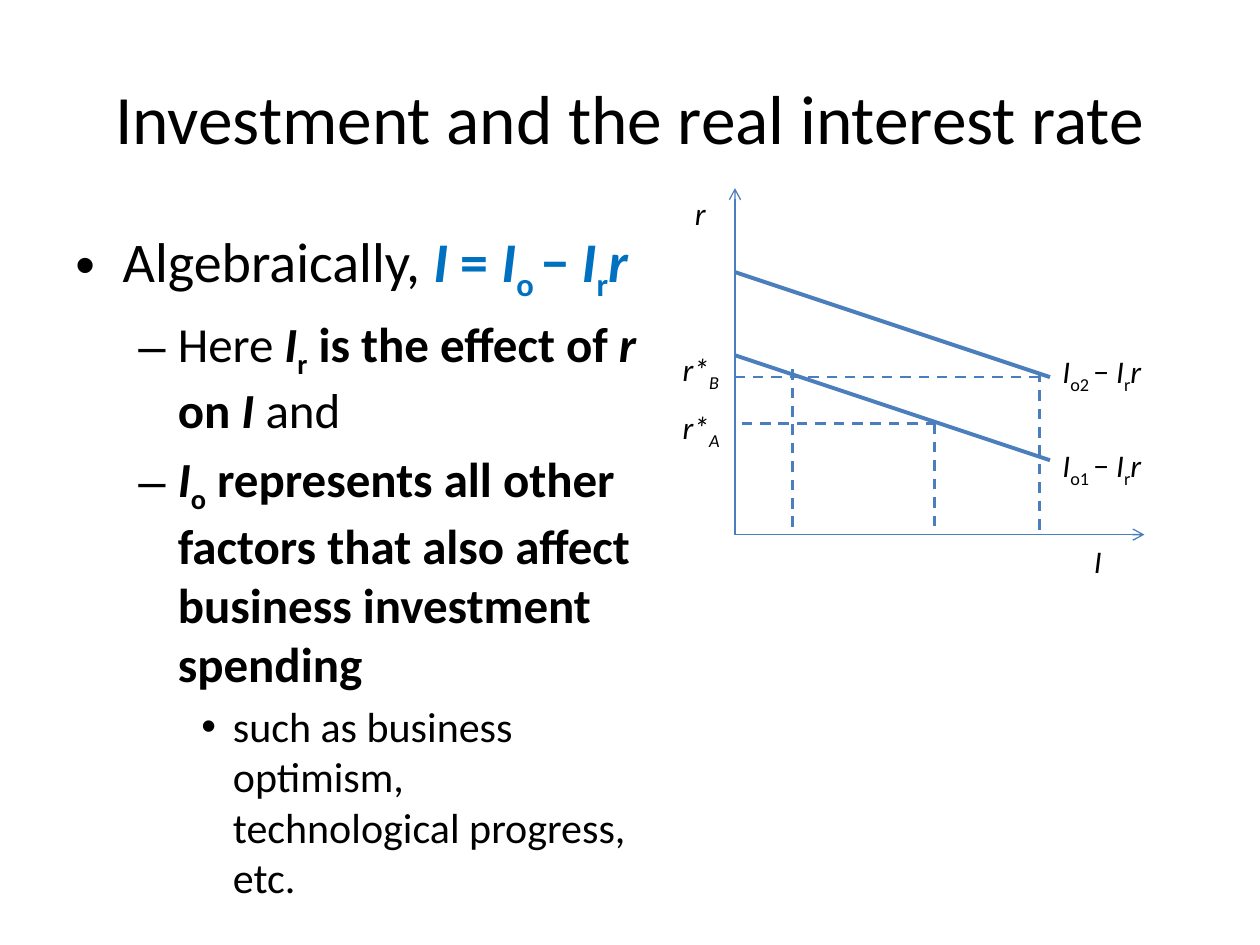
import pptx
import pptx.dml.color
import pptx.enum.dml
import pptx.enum.shapes
import pptx.enum.text
import pptx.oxml.ns
import pptx.util
from lxml import etree

Pt = pptx.util.Pt
RGBColor = pptx.dml.color.RGBColor
BLACK = RGBColor(0x00, 0x00, 0x00)
ACCENT = RGBColor(0x00, 0x70, 0xC0)
LINE_BLUE = RGBColor(0x4B, 0x7E, 0xBC)
WHITE = RGBColor(0xFF, 0xFF, 0xFF)

# Bullet level: size, left margin, hanging indent, bullet character
LEVELS = [(32, 27, 27, "•"), (28, 58.5, 22.5, "–"), (24, 90, 18, "•")]

# Each span is (text, flags): b bold, i italic, s subscript, a accent colour
BODY = [
    (0, [("Algebraically, ", ""), ("I", "bia"), (" = ", "ba"), ("I", "bia"),
         ("o ", "bsa"), ("− ", "ba"), ("I", "bia"), ("r", "bsa"), ("r", "bia")]),
    (1, [("Here ", ""), ("I", "bi"), ("r", "bs"), (" is the effect of ", "b"),
         ("r", "bi"), (" on ", "b"), ("I ", "bi"), ("and", "")]),
    (1, [("I", "bi"), ("o", "bs"),
         (" represents all other factors that also affect business investment spending", "b")]),
    (2, [("such as business optimism, technological progress, etc.", "")]),
]


def curve_label(number):
    return [("I", "i"), (f"o{number} ", "s"), ("− ", ""), ("I", "i"), ("r", "s"), ("r", "i")]


def rate_label(letter):
    return [("r*", "i"), (letter, "is")]


class SlideBuilder:
    font_name = "Calibri"
    label_size = 18

    def __init__(self, deck):
        self.page = deck.slides.add_slide(deck.slide_layouts[5])
        self.page.background.fill.solid()
        self.page.background.fill.fore_color.rgb = WHITE

    def add_spans(self, para, spans, size):
        for text, flags in spans:
            span = para.add_run()
            span.text = text
            style = {"name": self.font_name, "size": Pt(size),
                     "bold": "b" in flags, "italic": "i" in flags}
            for name, value in style.items():
                setattr(span.font, name, value)
            span.font.color.rgb = ACCENT if "a" in flags else BLACK
            if "s" in flags:
                span._r.get_or_add_rPr().set("baseline", "-25000")

    def title(self, text, left, top, width, height):
        box = self.page.shapes.title
        place = {"left": left, "top": top, "width": width, "height": height}
        for name, value in place.items():
            setattr(box, name, Pt(value))
        frame = box.text_frame
        frame.auto_size = pptx.enum.text.MSO_AUTO_SIZE.NONE
        frame.vertical_anchor = pptx.enum.text.MSO_ANCHOR.MIDDLE
        para = frame.paragraphs[0]
        para.alignment = pptx.enum.text.PP_ALIGN.CENTER
        self.add_spans(para, [(text, "")], 39.6)

    def text_frame(self, left, top, width, height):
        box = self.page.shapes.add_textbox(Pt(left), Pt(top), Pt(width), Pt(height))
        box.text_frame.word_wrap = True
        return box.text_frame

    def bullets(self, items, left, top, width, height):
        frame = self.text_frame(left, top, width, height)
        for index, (level, spans) in enumerate(items):
            size, margin, hanging, mark = LEVELS[level]
            para = frame.add_paragraph() if index else frame.paragraphs[0]
            para.level = level
            para.space_before = Pt(size * 0.2)
            properties = para._p.get_or_add_pPr()
            properties.set("marL", str(Pt(margin)))
            properties.set("indent", str(-Pt(hanging)))
            for tag, key, value in (("a:buFont", "typeface", "Arial"),
                                    ("a:buChar", "char", mark)):
                etree.SubElement(properties, pptx.oxml.ns.qn(tag)).set(key, value)
            self.add_spans(para, spans, size)

    def label(self, spans, left, top, width):
        frame = self.text_frame(left, top, width, 29)
        frame.auto_size = pptx.enum.text.MSO_AUTO_SIZE.SHAPE_TO_FIT_TEXT
        self.add_spans(frame.paragraphs[0], spans, self.label_size)

    def line(self, start, end, weight, dashed=False, arrow=False):
        connector = self.page.shapes.add_connector(
            pptx.enum.shapes.MSO_CONNECTOR.STRAIGHT,
            *(Pt(value) for value in (*start, *end)))
        connector.line.color.rgb = LINE_BLUE
        connector.line.width = Pt(weight)
        if dashed:
            connector.line.dash_style = pptx.enum.dml.MSO_LINE.DASH
        if arrow:
            outline = connector.line._get_or_add_ln()
            etree.SubElement(outline, pptx.oxml.ns.qn("a:tailEnd")).set("type", "arrow")
        etree.SubElement(connector._element.spPr, pptx.oxml.ns.qn("a:effectLst"))


def main():
    deck = pptx.Presentation()
    deck.slide_width, deck.slide_height = Pt(720), Pt(540)
    slide = SlideBuilder(deck)
    slide.title("Investment and the real interest rate", 36, 21.6, 648, 90)
    slide.bullets(BODY, 36, 126, 336, 356.5)

    origin_x, origin_y = 420, 305.5
    for axis_end in ((654, origin_y), (origin_x, 107.5)):
        slide.line((origin_x, origin_y), axis_end, 0.75, arrow=True)
    for intercept in (203, 155.5):
        slide.line((origin_x, intercept), (600, intercept + 60), 2.25)
    for x, top in ((534, 242), (453, 211), (594, 212.5)):
        slide.line((x, top), (x, origin_y), 1.5, dashed=True)
    for x, rate in ((535, 242), (594, 215.5)):
        slide.line((x, rate), (origin_x, rate), 1.5, dashed=True)

    for spans, left, top, width in (
        ([("I", "i")], 618, 306, 30),
        ([("r", "i")], 390, 107.5, 30),
        (curve_label(1), 600, 251.5, 72),
        (curve_label(2), 600, 197.5, 72),
        (rate_label("B"), 383, 196.5, 38),
        (rate_label("A"), 383, 229.5, 38),
    ):
        slide.label(spans, left, top, width)
    deck.save("out.pptx")


if __name__ == "__main__":
    main()
